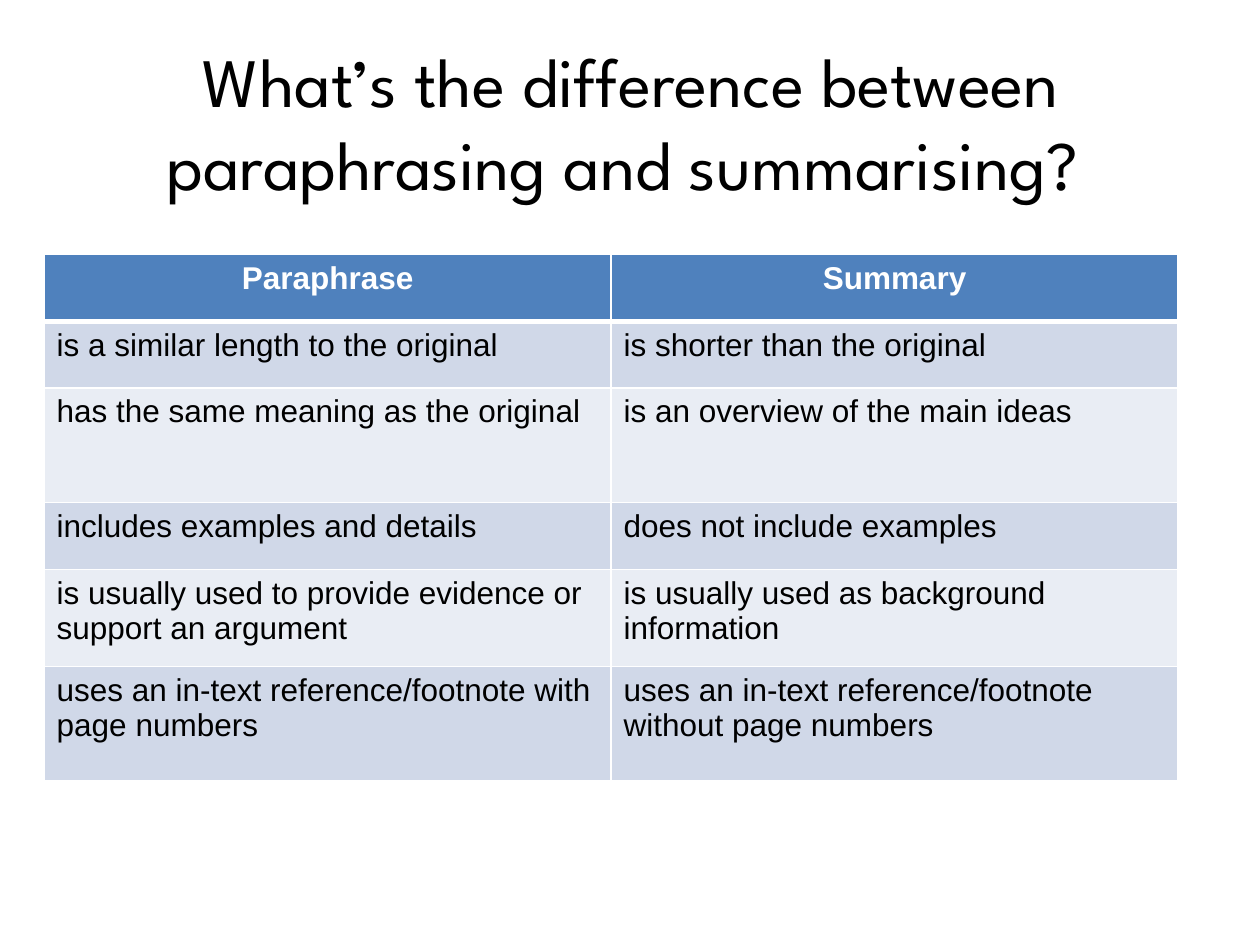
from dataclasses import dataclass
from typing import NamedTuple

from lxml.etree import SubElement
from pptx import Presentation
from pptx.dml.color import RGBColor as RGB
from pptx.enum.text import MSO_ANCHOR as Anchor, PP_ALIGN as Align
from pptx.oxml.ns import qn
from pptx.util import Inches, Pt


@dataclass(frozen=True)
class Theme:
    title_font: str = "League Spartan"
    body_font: str = "Arial"
    title_size: float = 39.6
    body_size: float = 18
    text: str = "000000"
    white: str = "FFFFFF"
    header: str = "4F81BD"
    bands: tuple[str, str] = ("D0D8E8", "E9EDF4")
    rule: float = 1
    header_rule: float = 3


class Row(NamedTuple):
    paraphrase: str
    summary: str
    height: float


THEME = Theme()
TITLE = "What’s the difference between paraphrasing and summarising? "
ROWS = [
    Row("Paraphrase", "Summary", 0.53),
    Row("is a similar length to the original", "is shorter than the original", 0.53),
    Row("has the same meaning as the original", "is an overview of the main ideas", 0.91),
    Row("includes examples and details", "does not include examples", 0.53),
    Row("is usually used to provide evidence or support an argument",
        "is usually used as background information", 0.77),
    Row("uses an in-text reference/footnote with page numbers",
        "uses an in-text reference/footnote without page numbers", 0.91),
]


def write(p, text: str, align: Align, color: str, **font) -> None:
    p.alignment = align
    r = p.add_run()
    r.text = text
    for name, value in font.items():
        setattr(r.font, name, value)
    r.font.color.rgb = RGB.from_string(color)


def set_borders(cell, widths: dict[str, float]) -> None:
    pr = cell._tc.get_or_add_tcPr()
    for i, (side, width) in enumerate(widths.items()):
        ln = SubElement(pr, qn(f"a:ln{side}"), w=str(Pt(width)))
        pr.insert(i, ln)
        fill = SubElement(ln, qn("a:solidFill"))
        SubElement(fill, qn("a:srgbClr"), val=THEME.white)


def add_title(slide) -> None:
    sp = slide.shapes.add_textbox(Inches(0.51), Inches(0.52), Inches(9), Inches(1.56))
    tf = sp.text_frame
    frame = dict(word_wrap=True, vertical_anchor=Anchor.MIDDLE, margin_bottom=Inches(0.72))
    for name, value in frame.items():
        setattr(tf, name, value)
    write(tf.paragraphs[0], TITLE, Align.CENTER, THEME.text,
          name=THEME.title_font, size=Pt(THEME.title_size))


def add_comparison(slide, rows: list[Row]) -> None:
    height = sum(row.height for row in rows)
    table = slide.shapes.add_table(len(rows), 2, Inches(0.35), Inches(2.02),
                                   Inches(9), Inches(height)).table
    for i, row in enumerate(rows):
        table.rows[i].height = Inches(row.height)
        header = i == 0
        fill = THEME.header if header else THEME.bands[(i - 1) % 2]
        widths = dict.fromkeys("LRTB", THEME.rule)
        if header:
            widths["B"] = THEME.header_rule
        elif i == 1:
            widths["T"] = THEME.header_rule
        for j, text in enumerate((row.paraphrase, row.summary)):
            cell = table.cell(i, j)
            cell.fill.solid()
            cell.fill.fore_color.rgb = RGB.from_string(fill)
            set_borders(cell, widths)
            write(cell.text_frame.paragraphs[0], text,
                  Align.CENTER if header else Align.LEFT,
                  THEME.white if header else THEME.text,
                  name=THEME.body_font, size=Pt(THEME.body_size), bold=header)


def main() -> None:
    prs = Presentation()
    prs.slide_width, prs.slide_height = Inches(10), Inches(7.5)
    slide = prs.slides.add_slide(prs.slide_layouts[6])
    add_comparison(slide, ROWS)
    add_title(slide)
    prs.save("out.pptx")


if __name__ == "__main__":
    main()
